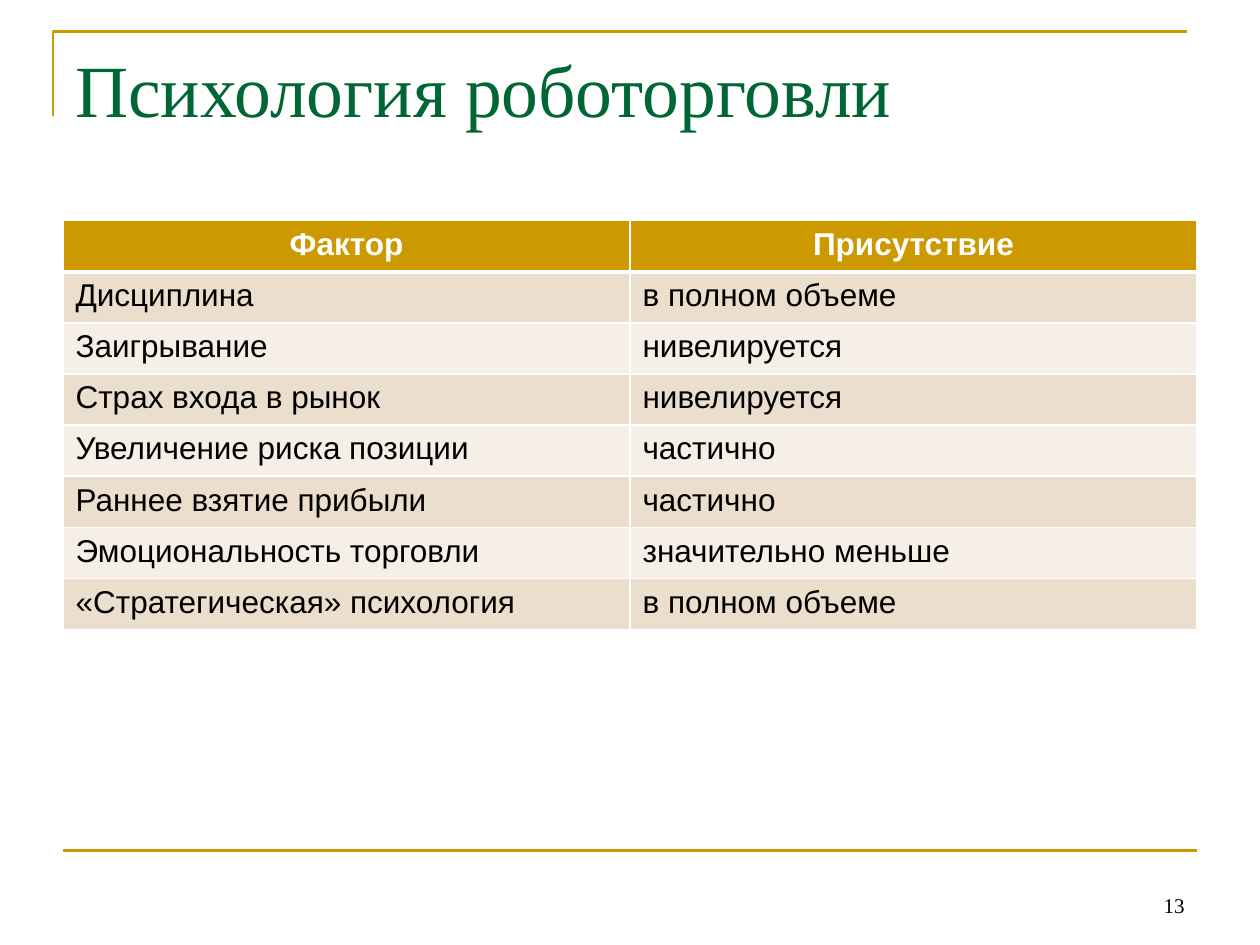
from lxml.etree import SubElement
from pptx import Presentation
from pptx.dml.color import RGBColor
from pptx.enum.shapes import MSO_CONNECTOR
from pptx.enum.text import MSO_ANCHOR, PP_ALIGN
from pptx.oxml.ns import qn
from pptx.util import Cm, Pt

GOLD, GREEN, WHITE, BLACK = "CC9900", "006633", "FFFFFF", "000000"
BANDS = ("ECDECC", "F6EFE7")
LEFT, WIDTH = 1.27, 22.86
ROW_HEIGHT = 1.03

FACTORS = [
    ("Фактор", "Присутствие"),
    ("Дисциплина", "в полном объеме"),
    ("Заигрывание", "нивелируется"),
    ("Страх входа в рынок", "нивелируется"),
    ("Увеличение риска позиции", "частично"),
    ("Раннее взятие прибыли", "частично"),
    ("Эмоциональность торговли", "значительно меньше"),
    ("«Стратегическая» психология", "в полном объеме"),
]


def color(hex_value):
    return RGBColor.from_string(hex_value)


def style_line(line):
    line.color.rgb = color(GOLD)
    line.width = Pt(1.5)


def style_paragraph(paragraph, font_name, size, hex_value, align, bold=False):
    paragraph.alignment = align
    font = paragraph.font
    font.name, font.size, font.bold = font_name, Pt(size), bold
    font.color.rgb = color(hex_value)


def add_corner(slide):
    left, top, right, bottom = Cm(1.07), Cm(0.64), Cm(23.93), Cm(2.34)
    builder = slide.shapes.build_freeform(left, bottom)
    builder.add_line_segments([(left, top), (right, top)], close=False)
    corner = builder.convert_to_shape()
    corner.shadow.inherit = False
    corner.fill.background()
    style_line(corner.line)


def add_footer_rule(slide):
    y = Cm(17.15)
    rule = slide.shapes.add_connector(
        MSO_CONNECTOR.STRAIGHT, Cm(LEFT), y, Cm(LEFT + WIDTH), y)
    style_line(rule.line)
    SubElement(rule._element.spPr, qn("a:effectLst"))


def add_text(slide, text, left, top, width, height, size, hex_value,
             align=PP_ALIGN.LEFT, anchor=MSO_ANCHOR.TOP):
    box = slide.shapes.add_textbox(Cm(left), Cm(top), Cm(width), Cm(height))
    frame = box.text_frame
    frame.word_wrap = True
    frame.vertical_anchor = anchor
    frame.text = text
    style_paragraph(frame.paragraphs[0], "Times New Roman", size, hex_value, align)


def set_borders(cell, **widths):
    properties = cell._tc.get_or_add_tcPr()
    for side in "LRTB":
        border = SubElement(properties, qn(f"a:ln{side}"), w=str(Pt(widths.get(side, 1))))
        fill = SubElement(border, qn("a:solidFill"))
        SubElement(fill, qn("a:srgbClr"), val=WHITE)


def fill_cell(cell, text, row):
    header = row == 0
    # Thick rule between the header and the first factor
    set_borders(cell, B=3 if header else 1, T=3 if row == 1 else 1)
    cell.fill.solid()
    cell.fill.fore_color.rgb = color(GOLD if header else BANDS[(row - 1) % 2])
    cell.text = text
    style_paragraph(cell.text_frame.paragraphs[0], "Arial", 18,
                    WHITE if header else BLACK,
                    PP_ALIGN.CENTER if header else PP_ALIGN.LEFT, bold=header)


def add_factor_table(slide):
    table = slide.shapes.add_table(
        len(FACTORS), 2, Cm(LEFT), Cm(4.45), Cm(WIDTH),
        Cm(ROW_HEIGHT * len(FACTORS))).table
    for row, texts in enumerate(FACTORS):
        table.rows[row].height = Cm(ROW_HEIGHT)
        for column, text in enumerate(texts):
            fill_cell(table.cell(row, column), text, row)


def main():
    presentation = Presentation()
    presentation.slide_width, presentation.slide_height = Cm(25.4), Cm(19.05)
    slide = presentation.slides.add_slide(presentation.slide_layouts[6])

    # Frame lines
    add_corner(slide)
    add_footer_rule(slide)

    # Title, table and page number
    add_text(slide, "Психология роботорговли", LEFT, 0.76, WIDTH, 3.18, 42, GREEN)
    add_factor_table(slide)
    add_text(slide, "13", 18.2, 17.35, 5.93, 1.27, 12, BLACK,
             PP_ALIGN.RIGHT, MSO_ANCHOR.BOTTOM)

    presentation.save("out.pptx")


if __name__ == "__main__":
    main()
